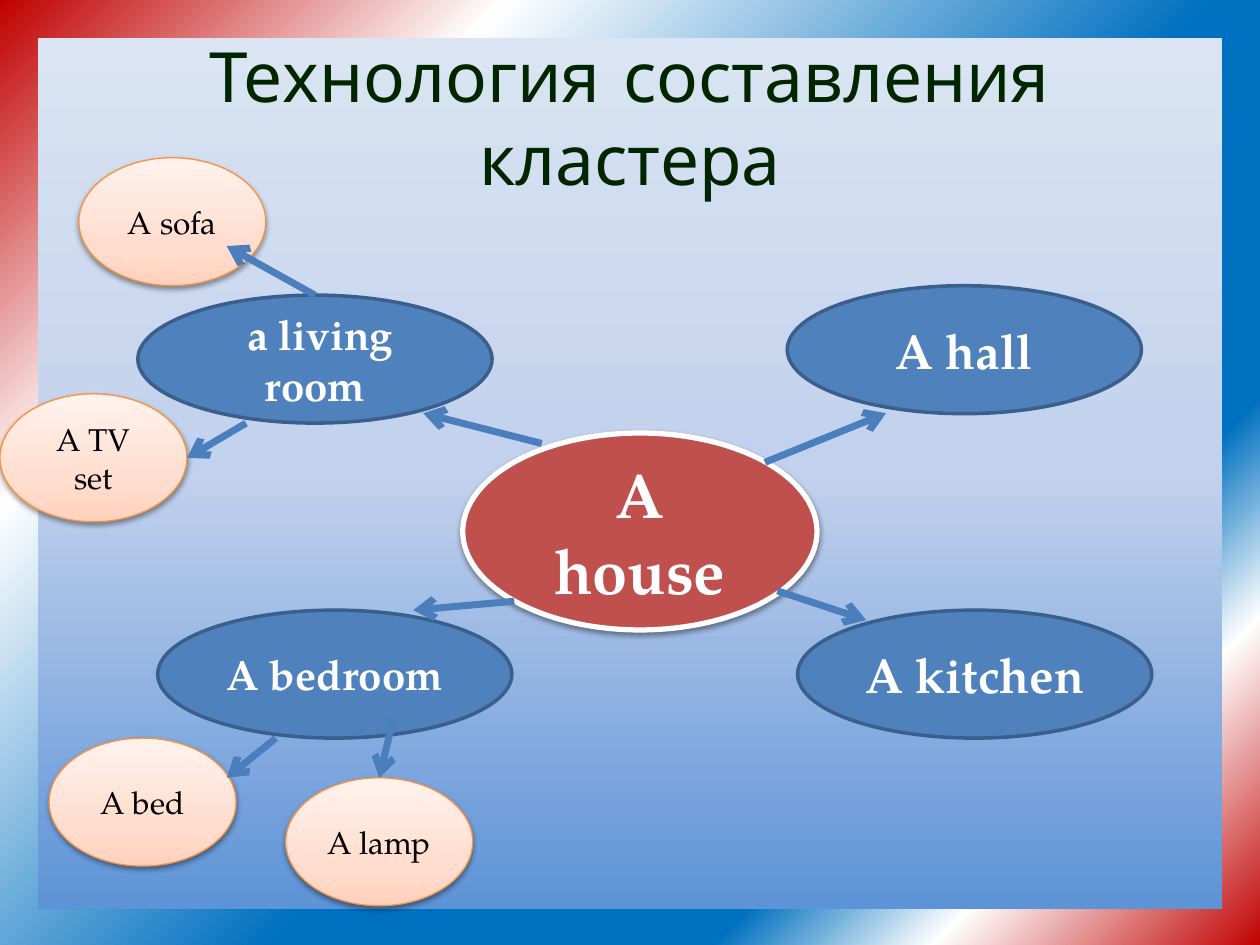
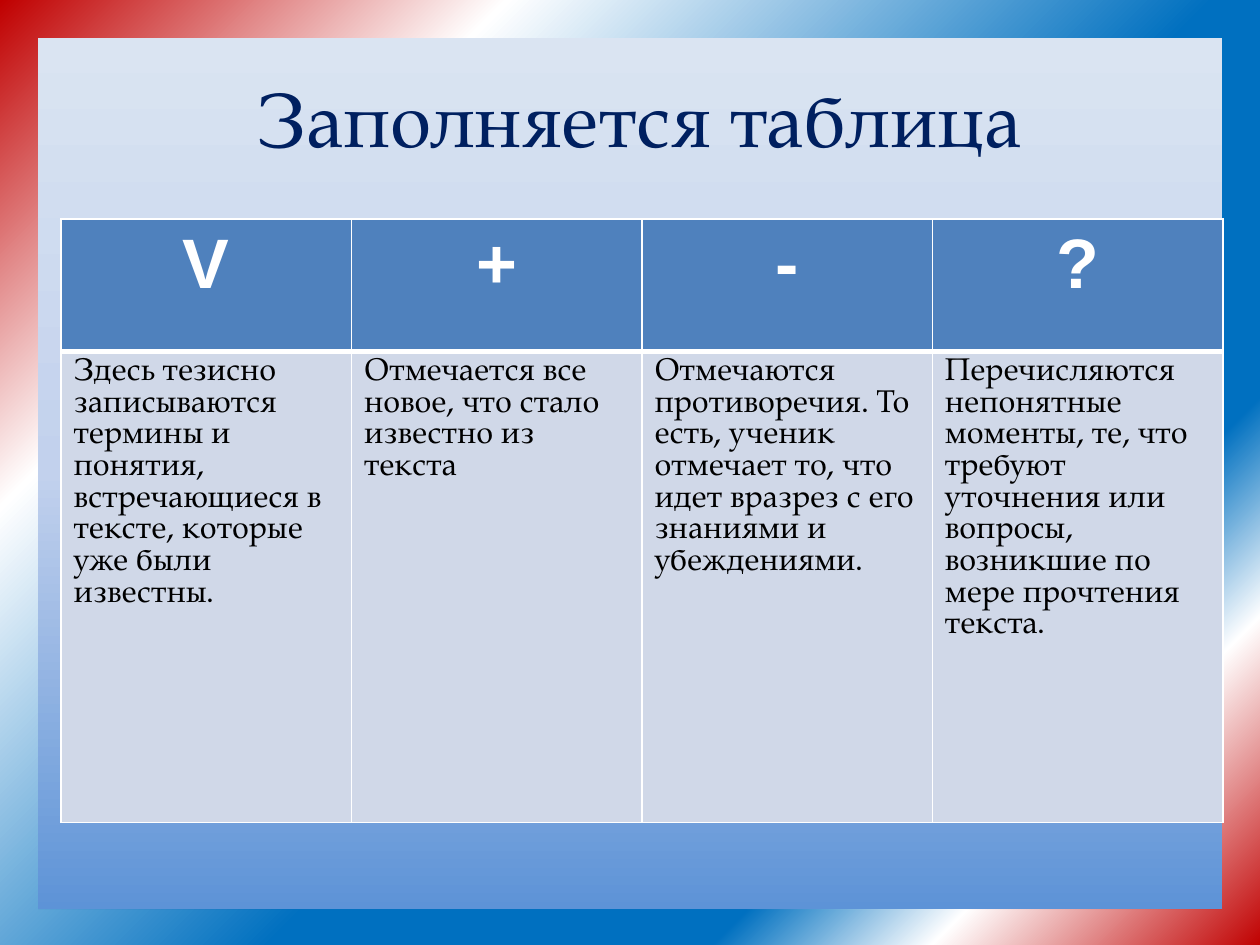
import pptx
import pptx.dml.color
import pptx.enum.shapes
import pptx.enum.text
import pptx.oxml
import pptx.oxml.ns
import pptx.util

Cm = pptx.util.Cm
Pt = pptx.util.Pt
SHAPES = pptx.enum.shapes.MSO_SHAPE
ALIGN = pptx.enum.text.PP_ALIGN

CLUSTER_TITLE = "Технология составления кластера"
TABLE_TITLE = " Заполняется таблица"

BUBBLES = [
    ("house", "A house", "core", 36, (9.33, 8.73)),
    ("living", " a living room", "room", 24, (2.78, 5.95)),
    ("lamp", "A lamp", "item", 18, (5.76, 15.68)),
    ("sofa", "A sofa", "item", 18, (1.59, 3.18)),
    ("tv", "A TV set", "item", 18, (0, 7.94)),
    ("bedroom", "A bedroom", "room", 24, (3.18, 12.3)),
    ("kitchen", "A kitchen", "room", 28, (16.08, 12.3)),
    ("hall", "A hall", "room", 28, (15.87, 5.76)),
    ("bed", "A bed", "item", 18, (0.99, 14.88)),
]

ARROWS = [
    ((15.42, 9.32), (17.86, 8.33)),
    ((15.67, 11.91), (17.46, 12.5)),
    ((10.37, 12.12), (8.33, 12.3)),
    ((10.92, 8.94), (8.53, 8.33)),
    ((5.56, 14.88), (4.57, 15.68)),
    ((7.93, 14.48), "lamp"),
    ((4.96, 8.53), (3.77, 9.23)),
    ("living", (4.57, 4.96)),
]

MARKS = [
    ("V", "Здесь тезисно записываются термины и понятия, встречающиеся в тексте, которые уже были известны."),
    ("+", "Отмечается все новое, что стало известно из текста"),
    ("-", "Отмечаются противоречия. То есть, ученик отмечает то, что идет вразрез с его знаниями и убеждениями."),
    ("?", "Перечисляются непонятные моменты, те, что требуют уточнения или вопросы, возникшие по мере прочтения текста."),
]

LINEAR = '<a:lin ang="{}" scaled="0"/>'
FROM_CORNER = '<a:path path="circle"><a:fillToRect r="100000" b="100000"/></a:path>'


class Theme:
    serif = "TeX Gyre Pagella"
    white = "FFFFFF"
    black = "000000"
    blue = "4F81BD"
    arrow = "4B7EBC"
    cell = "D0D8E8"
    cluster_title = {"name": "Comic Neue", "size": Pt(39.6), "color": "002600"}
    table_title = {"name": serif, "size": Pt(44), "color": "002060"}
    mark = {"name": "Arial", "size": Pt(40), "bold": True, "color": white}
    note = {"name": serif, "size": Pt(18), "bold": False, "color": black}
    sky = [(0, "DCE6F2"), (50, "C2D1ED"), (100, "558ED5")]
    ribbon = [(0, "C00000"), (23, white), (55, "0070C0"),
              (75, "0070C0"), (85, white), (100, "C00000")]
    peach = [(0, "FFD2BD"), (35, "FFDED0"), (100, "FFF2ED")]
    bubbles = {
        "core": {"size": (7.14, 3.97), "fill": "C0504D", "line": white,
                 "width": 3, "text": white, "bold": True, "shadow": True},
        "room": {"size": (7.14, 2.58), "fill": blue, "line": "3A5F8C",
                 "width": 2, "text": white, "bold": True, "shadow": False},
        "item": {"size": (3.77, 2.58), "fill": peach, "line": "F69240",
                 "width": 0.75, "text": black, "bold": False, "shadow": True},
    }


def rgb(value):
    return pptx.dml.color.RGBColor.from_string(value)


def element(tag, attributes="", inner=""):
    names = pptx.oxml.ns.nsdecls("a")
    return pptx.oxml.parse_xml(f"<a:{tag} {names} {attributes}>{inner}</a:{tag}>")


def paint_gradient(solid, stops, direction):
    colours = "".join(
        f'<a:gs pos="{place * 1000}"><a:srgbClr val="{colour}"/></a:gs>'
        for place, colour in stops)
    gradient = element("gradFill", 'rotWithShape="1"', f"<a:gsLst>{colours}</a:gsLst>{direction}")
    solid.getparent().replace(solid, gradient)


def fill_shape(shape, fill, direction):
    shape.fill.solid()
    if isinstance(fill, str):
        shape.fill.fore_color.rgb = rgb(fill)
    else:
        paint_gradient(shape.element.xpath("./p:spPr/a:solidFill")[0], fill, direction)


def write(frame, text, look, align=ALIGN.CENTER):
    para = frame.paragraphs[0]
    para.alignment = align
    span = para.add_run()
    span.text = text
    for name, value in look.items():
        if name == "color":
            span.font.color.rgb = rgb(value)
        else:
            setattr(span.font, name, value)


def add_page(deck, title, look):
    page = deck.slides.add_slide(deck.slide_layouts[6])
    page.background.fill.solid()
    paint_gradient(page.element.xpath(".//p:bgPr/a:solidFill")[0],
                   Theme.sky, LINEAR.format(90 * 60000))
    border = page.shapes.add_shape(SHAPES.FRAME, 0, 0, deck.slide_width, Cm(19.1))
    border.adjustments[0] = 0.04
    border.shadow.inherit = False
    border.line.fill.background()
    fill_shape(border, Theme.ribbon, FROM_CORNER)
    box = page.shapes.add_textbox(Cm(1.27), Cm(0.76), Cm(22.86), Cm(3.18))
    box.text_frame.word_wrap = True
    box.text_frame.vertical_anchor = pptx.enum.text.MSO_ANCHOR.MIDDLE
    write(box.text_frame, title, look)
    return page


def add_bubble(page, text, kind, size, corner):
    style = Theme.bubbles[kind]
    bubble = page.shapes.add_shape(SHAPES.OVAL, *map(Cm, corner + style["size"]))
    bubble.shadow.inherit = False
    fill_shape(bubble, style["fill"], LINEAR.format(270 * 60000))
    bubble.line.color.rgb = rgb(style["line"])
    bubble.line.width = Pt(style["width"])
    if style["shadow"]:
        bubble.element.xpath("./p:spPr/a:effectLst")[0].append(element(
            "outerShdw",
            f'blurRad="{Pt(3.1)}" dist="{Pt(1.6)}" dir="5400000" rotWithShape="0"',
            f'<a:srgbClr val="{Theme.black}"><a:alpha val="38000"/></a:srgbClr>'))
    write(bubble.text_frame, text, {"name": Theme.serif, "size": Pt(size),
                                    "bold": style["bold"], "color": style["text"]})
    return bubble


def add_arrow(page, start, end, bubbles):
    points = [(0, 0) if isinstance(point, str) else point for point in (start, end)]
    arrow = page.shapes.add_connector(
        pptx.enum.shapes.MSO_CONNECTOR.STRAIGHT, *map(Cm, points[0] + points[1]))
    for point, connect in ((start, arrow.begin_connect), (end, arrow.end_connect)):
        if isinstance(point, str):
            connect(bubbles[point], 0)
    arrow.line.color.rgb = rgb(Theme.arrow)
    arrow.line.width = Pt(4)
    arrow.element.xpath("./p:spPr/a:ln")[0].append(element("tailEnd", 'type="arrow"'))
    arrow.element.spPr.append(element("effectLst"))


def border_cell(cell, widths):
    properties = cell._tc.get_or_add_tcPr()
    for index, (side, width) in enumerate(zip("LRTB", widths)):
        properties.insert(index, element(
            f"ln{side}", f'w="{Pt(width)}"',
            f'<a:solidFill><a:srgbClr val="{Theme.white}"/></a:solidFill>'))


def build_cluster(deck):
    page = add_page(deck, CLUSTER_TITLE, Theme.cluster_title)
    bubbles = {name: add_bubble(page, *details) for name, *details in BUBBLES}
    for start, end in ARROWS:
        add_arrow(page, start, end, bubbles)


def build_table(deck):
    page = add_page(deck, TABLE_TITLE, Theme.table_title)
    heights = (2.67, 9.5)
    table = page.shapes.add_table(
        2, len(MARKS), Cm(1.23), Cm(4.41), Cm(23.42), Cm(sum(heights))).table
    for row, height in zip(table.rows, heights):
        row.height = Cm(height)
    rows = [
        (Theme.mark, Theme.blue, ALIGN.CENTER, (1, 1, 1, 3)),
        (Theme.note, Theme.cell, ALIGN.LEFT, (1, 1, 3, 1)),
    ]
    for column, texts in enumerate(MARKS):
        for line, (text, style) in enumerate(zip(texts, rows)):
            look, fill, align, widths = style
            cell = table.cell(line, column)
            cell.fill.solid()
            cell.fill.fore_color.rgb = rgb(fill)
            border_cell(cell, widths)
            write(cell.text_frame, text, look, align)


def main():
    deck = pptx.Presentation()
    deck.slide_width, deck.slide_height = Cm(25.4), Cm(19.05)
    build_cluster(deck)
    build_table(deck)
    deck.save("out.pptx")


if __name__ == "__main__":
    main()
